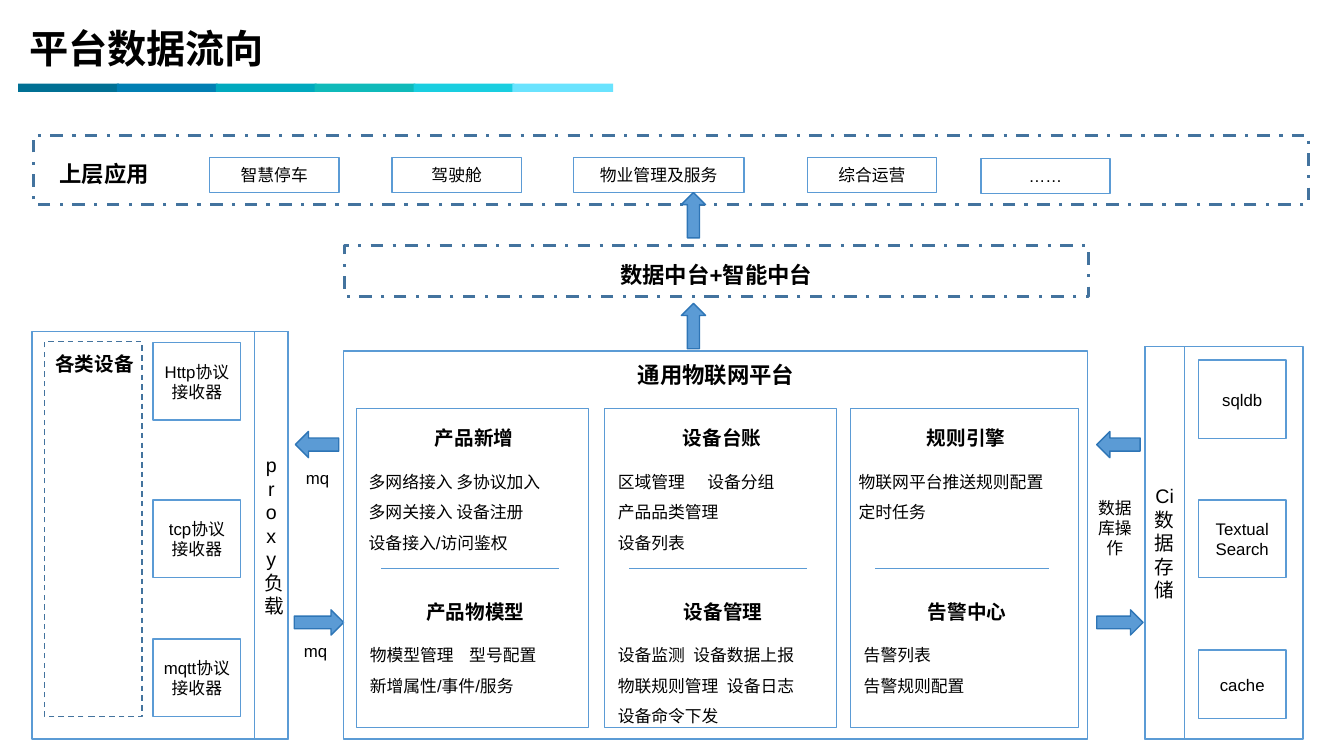
from lxml.etree import SubElement
from pptx import Presentation
from pptx.dml.color import RGBColor
from pptx.enum.dml import MSO_LINE
from pptx.enum.shapes import MSO_CONNECTOR, MSO_SHAPE
from pptx.enum.text import MSO_ANCHOR, PP_ALIGN
from pptx.oxml.ns import qn
from pptx.util import Pt

BLUE, NAVY, EDGE, BLACK = "5B9BD5", "43739E", "2E75B6", "000000"
STRIPE = ["007094", "017FB3", "00A9BE", "0FBABA", "19CEE0", "6AE3FE"]


def rgb(value):
    return RGBColor.from_string(value)


def write(tf, lines, size, bold=False, align=PP_ALIGN.CENTER, font="Arial", spacing=None):
    """Fill a text frame; a line is a string or (string, tab stop)."""
    tf.word_wrap = True
    for i, line in enumerate(lines):
        text, stop = line if isinstance(line, tuple) else (line, None)
        p = tf.paragraphs[0] if i == 0 else tf.add_paragraph()
        p.text = text
        p.alignment = align
        p.font.size, p.font.bold, p.font.name = Pt(size), bold, font
        p.font.color.rgb = rgb(BLACK)
        if spacing:
            p.line_spacing = spacing
        if stop:
            tabs = SubElement(p._p.get_or_add_pPr(), qn("a:tabLst"))
            SubElement(tabs, qn("a:tab"), pos=str(Pt(stop)), algn="l")
            pPr = p._p.pPr
            pPr.insert(list(pPr).index(pPr.find(qn("a:defRPr"))), tabs)


def label(s, x, y, w, h, lines, size, **style):
    tb = s.shapes.add_textbox(Pt(x), Pt(y), Pt(w), Pt(h))
    write(tb.text_frame, lines, size, **style)


def shape(s, kind, x, y, w, h, fill=None, line=BLUE, width=1, dash=None):
    sp = s.shapes.add_shape(kind, Pt(x), Pt(y), Pt(w), Pt(h))
    sp.shadow.inherit = False
    if fill:
        sp.fill.solid()
        sp.fill.fore_color.rgb = rgb(fill)
    else:
        sp.fill.background()
    if line:
        sp.line.color.rgb = rgb(line)
        sp.line.width = Pt(width)
        if dash:
            sp.line.dash_style = dash
    else:
        sp.line.fill.background()
    return sp


def box(s, x, y, w, h, lines=(), size=12, kind=MSO_SHAPE.RECTANGLE, **style):
    sp = shape(s, kind, x, y, w, h, **style)
    if lines:
        sp.text_frame.vertical_anchor = MSO_ANCHOR.MIDDLE
        write(sp.text_frame, lines, size)


def header(s, x, y):
    label(s, x + 0.7, y, 396, 41, ["平台数据流向"], 28, bold=True,
          align=PP_ALIGN.LEFT, font="Open Sans")
    for i, color in enumerate(STRIPE):
        box(s, x + 70.6 * i, y + 46.1, 72, 5.8, fill=color, line=None)


def applications(s, x, y, w, h):
    box(s, x, y, w, h, line=NAVY, width=2.25, dash=MSO_LINE.DASH_DOT)
    label(s, x + 5, y + 14.4, 91.4, 26.6, ["上层应用"], 16, bold=True)
    for name, dx, dy, width in [("智慧停车", 126, 15.8, 92.2), ("驾驶舱", 256.3, 15.8, 92.2),
                                ("物业管理及服务", 385.9, 15.8, 121.7),
                                ("综合运营", 552.9, 15.8, 92.2), ("……", 676.8, 16.6, 92.2)]:
        box(s, x + dx, y + dy, width, 25.2, [name], kind=MSO_SHAPE.FLOWCHART_PROCESS)


def middle_layer(s, x, y, w, h):
    box(s, x, y, w, h, line=NAVY, width=2.25, dash=MSO_LINE.DASH_DOT)
    label(s, x + 82.1, y + 7.2, 366.5, 26.6, ["数据中台+智能中台"], 16, bold=True)


def devices(s, x, y, w, h):
    box(s, x, y, w, h)
    for name, dy in [("Http协议接收器", 7.9), ("tcp协议接收器", 120.2), ("mqtt协议接收器", 219.6)]:
        box(s, x + 86.4, y + dy, 62.6, 55.4, [name])
    box(s, x + w - 24.1, y, 24, h, ["proxy负载"], 14)
    box(s, x + 8.7, y + 7.2, 69.8, 267.8, line=NAVY, dash=MSO_LINE.DASH)
    label(s, x + 7.2, y + 10.8, 74.9, 26.6, ["各类设备"], 14, bold=True)


def storage(s, x, y, w, h):
    box(s, x, y, w, h)
    for lines, dy, height in [(["sqldb"], 9.4, 56.2), (["Textual", "Search"], 109.4, 55.4),
                              (["cache"], 216.7, 49)]:
        box(s, x + 38.2, y + dy, 62.6, height, lines)
    box(s, x, y, 28.1, h, ["Ci数据存储"], 14)


def module_column(s, x, y, w, h, modules, list_dx):
    box(s, x, y, w, h)
    for (title, lines), dx, top, lx in zip(modules, (2.2, 2.9), (9.4, 133.2), list_dx):
        label(s, x + dx, y + top, w - 2.2, 24.5, [title], 14, bold=True)
        label(s, x + lx, y + top + 25.2, w + 3, 24.2 * len(lines), lines, 12,
              align=PP_ALIGN.LEFT, spacing=1.5)
    # Divider between the two modules
    c = s.shapes.add_connector(MSO_CONNECTOR.STRAIGHT, Pt(x + 17.5), Pt(y + 114.5),
                               Pt(x + w - 20.9), Pt(y + 114.5))
    c.line.color.rgb = rgb(BLUE)
    c.line.width = Pt(1)
    SubElement(c._element.spPr, qn("a:effectLst"))


def platform(s, x, y, w, h):
    box(s, x, y, w, h)
    label(s, x + 82.8, y + 3.6, 366.5, 26.6, ["通用物联网平台"], 16, bold=True)
    columns = [
        (9.4, 165.6, (1.4, 2.2), [
            ("产品新增", ["多网络接入 多协议加入", "多网关接入 设备注册", "设备接入/访问鉴权"]),
            ("产品物模型", [("物模型管理\t型号配置", 71), "新增属性/事件/服务"])]),
        (186.5, 165.6, (2.2, 2.2), [
            ("设备台账", [("区域管理\t设备分组", 64), "产品品类管理", "设备列表"]),
            ("设备管理", [("设备监测\t设备数据上报", 54), ("物联规则管理\t设备日志", 78),
                      "设备命令下发"])]),
        (362.2, 162.7, (-1.4, 2.2), [
            ("规则引擎", ["物联网平台推送规则配置", "定时任务"]),
            ("告警中心", ["告警列表", "告警规则配置"])]),
    ]
    for dx, width, list_dx, modules in columns:
        module_column(s, x + dx, y + 41, width, 228.2, modules, list_dx)


def flows(s):
    up, left, right = MSO_SHAPE.UP_ARROW, MSO_SHAPE.LEFT_ARROW, MSO_SHAPE.RIGHT_ARROW
    for kind, x, y, w, h in [(up, 486.7, 137.5, 17.3, 32.4), (up, 486.7, 216.7, 17.3, 32.4),
                             (left, 211, 308.2, 31, 18.7), (left, 783.4, 308.2, 31, 18.7),
                             (right, 210.2, 435.6, 35.3, 18), (right, 783.4, 435.6, 33.1, 18)]:
        shape(s, kind, x, y, w, h, fill=BLUE, line=EDGE)
    for text, x, y, w, h in [("mq", 209.5, 330.5, 34.6, 21.6), ("mq", 208.1, 454.3, 34.6, 21.6),
                             ("数据库操作", 776.9, 352.1, 38.9, 51.1)]:
        label(s, x, y, w, h, [text], 12)


def main():
    prs = Presentation()
    prs.slide_width, prs.slide_height = Pt(960), Pt(540)
    s = prs.slides.add_slide(prs.slide_layouts[6])
    header(s, 13, 13.7)
    applications(s, 23.8, 96.5, 910.8, 49.7)
    middle_layer(s, 246.2, 175.7, 531.4, 36)
    devices(s, 23, 236.9, 182.9, 290.9)
    flows(s)
    storage(s, 817.9, 247.7, 113, 280.1)
    platform(s, 245.5, 250.6, 531.4, 277.2)
    prs.save("out.pptx")


if __name__ == "__main__":
    main()
